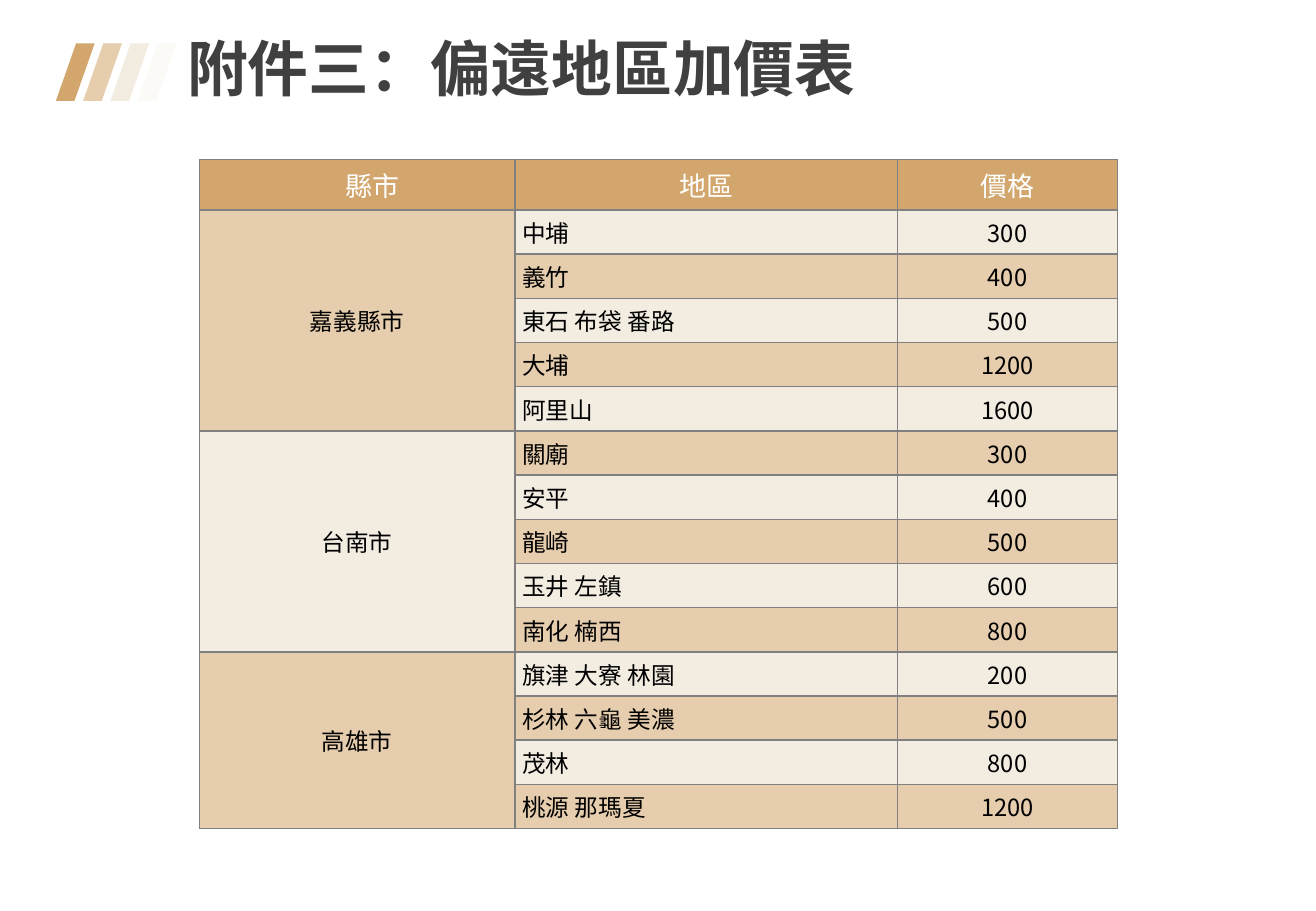
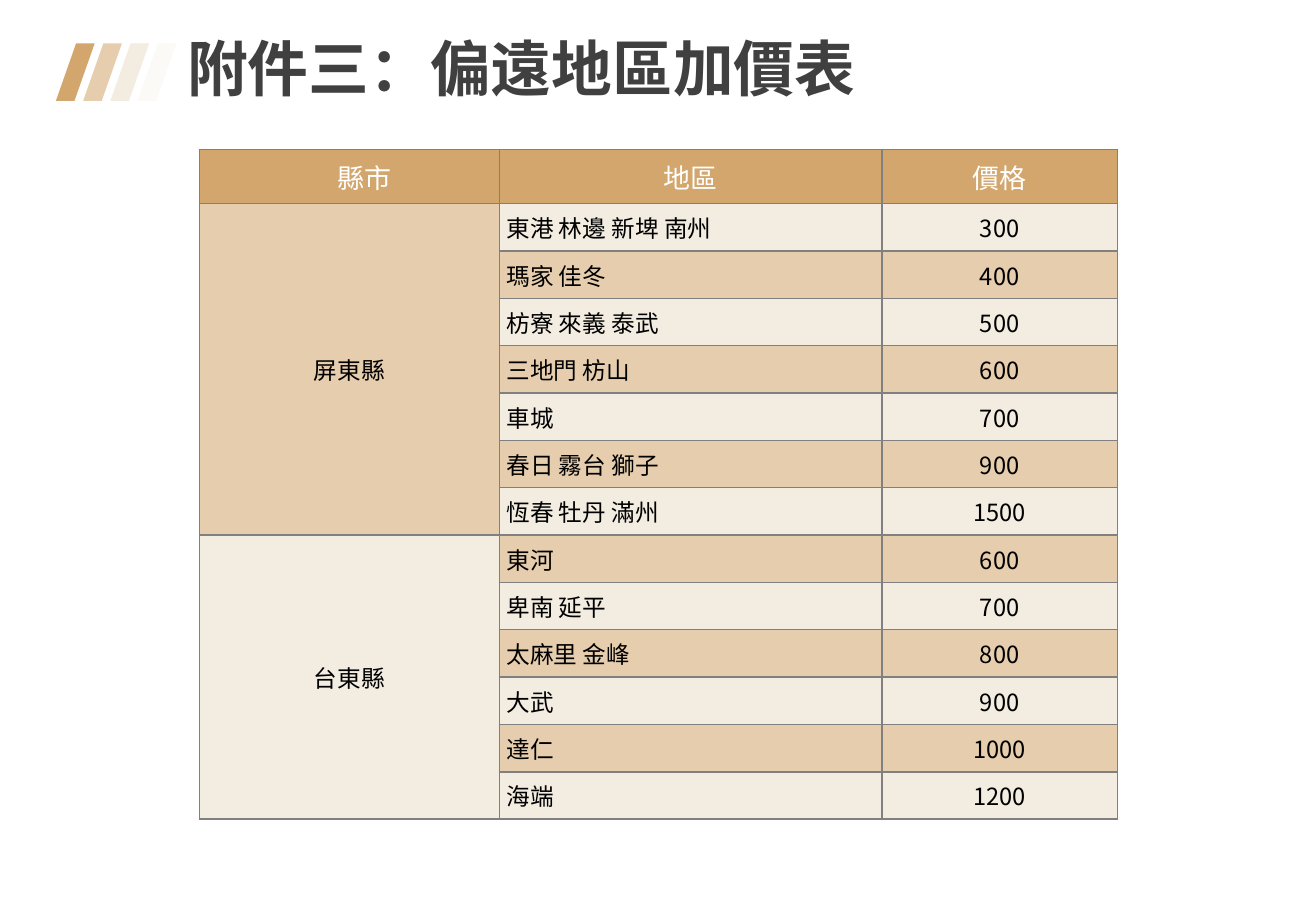
from lxml.etree import SubElement as Sub
from pptx import Presentation
from pptx.dml.color import RGBColor as Rgb
from pptx.enum.shapes import MSO_SHAPE as Kind
from pptx.enum.text import MSO_ANCHOR as Anchor, MSO_AUTO_SIZE as Fit, PP_ALIGN as Align
from pptx.oxml import parse_xml
from pptx.oxml.ns import nsdecls, qn
from pptx.util import Cm, Pt

HUES = {
    "gold": "D2A66C", "tan": "E6CDAD", "cream": "F2ECE1", "pale": "FBFAF6",
    "grid": "808080", "title": "404040", "black": "000000", "white": "FFFFFF",
}
SANS = "Noto Sans CJK SC"
TITLE = "附件三：偏遠地區加價表"
HEADS = ("縣市", "地區", "價格")
TALL = 14

SOUTH = {
    "嘉義縣市": [("中埔", 300), ("義竹", 400), ("東石 布袋 番路", 500),
             ("大埔", 1200), ("阿里山", 1600)],
    "台南市": [("關廟", 300), ("安平", 400), ("龍崎", 500),
            ("玉井 左鎮", 600), ("南化 楠西", 800)],
    "高雄市": [("旗津 大寮 林園", 200), ("杉林 六龜 美濃", 500),
            ("茂林", 800), ("桃源 那瑪夏", 1200)],
}
EAST = {
    "屏東縣": [("東港 林邊 新埤 南州", 300), ("瑪家 佳冬", 400),
            ("枋寮 來義 泰武", 500), ("三地門 枋山", 600), ("車城", 700),
            ("春日 霧台 獅子", 900), ("恆春 牡丹 滿州", 1500)],
    "台東縣": [("東河", 600), ("卑南 延平", 700), ("太麻里 金峰", 800),
            ("大武", 900), ("達仁", 1000), ("海端", 1200)],
}


def paint(fill, hue):
    """Fill with a named colour."""
    fill.solid()
    fill.fore_color.rgb = Rgb.from_string(HUES[hue])


def put(frame, text, size=14, hue="black", font=SANS, bold=False,
        align=Align.CENTER, space=1.0):
    """Write one formatted paragraph into a text frame."""
    para = frame.paragraphs[0]
    para.alignment, para.line_spacing = align, space
    run = para.add_run()
    run.text = text
    run.font.size, run.font.bold, run.font.name = Pt(size), bold, font
    run.font.color.rgb = Rgb.from_string(HUES[hue])
    Sub(run.font._element, qn("a:ea"), typeface=SANS)


def edge(cell):
    """Draw a thin line on all four sides of a cell."""
    props = cell._tc.get_or_add_tcPr()
    for i, side in enumerate("LRTB"):
        props.insert(i, parse_xml(
            f'<a:ln{side} {nsdecls("a")} w="12700"><a:solidFill>'
            f'<a:srgbClr val="{HUES["grid"]}"/></a:solidFill></a:ln{side}>'))


def style(cell, hue, pad=0.15):
    """Set the fill, margins and borders of a cell."""
    paint(cell.fill, hue)
    cell.vertical_anchor = Anchor.MIDDLE
    cell.margin_left = cell.margin_right = Cm(pad)
    cell.margin_top = cell.margin_bottom = 0
    edge(cell)


def setup(deck):
    """Place the title and the slanted bars on the shared layout."""
    page = deck.slide_layouts[5]
    head = page.placeholders[0]
    head.left, head.top, head.width, head.height = Cm(3.66), Cm(0.61), Cm(22.5), Cm(1.8)
    return page


def bars(slide, page):
    """Draw the slanted bars and move them to the layout."""
    for i, hue in enumerate(("gold", "tan", "cream", "pale")):
        bar = slide.shapes.add_shape(
            Kind.PARALLELOGRAM, Cm(1.17 + 0.57 * i), Cm(0.91), Cm(0.81), Cm(1.2))
        bar.adjustments[0] = 0.52
        bar.shadow.inherit = False
        paint(bar.fill, hue)
        bar.line.fill.background()
        bar.element.nvSpPr.cNvPr.set("id", str(20 + i))
        page.shapes.element.insert(2 + i, bar.element)


def grid(slide, data, top, wides, head):
    """Add a price table grouped by county."""
    count = sum(map(len, data.values()))
    table = slide.shapes.add_table(
        count + 1, 3, Cm(4.17), Cm(top), Cm(sum(wides)), Cm(TALL)).table
    for col, wide in zip(table.columns, wides):
        col.width = Cm(wide)
    for i, row in enumerate(table.rows):
        row.height = Cm((TALL - head) / count if i else head)
    for cell, text in zip(table.rows[0].cells, HEADS):
        style(cell, "gold", 0.18)
        put(cell.text_frame, text, size=16, hue="white")
    table.cell(0, 0).margin_left = Cm(0.82)
    row = 1
    for i, (county, areas) in enumerate(data.items()):
        first = table.cell(row, 0)
        put(first.text_frame, county)
        for area, price in areas:
            style(table.cell(row, 0), "cream" if i % 2 else "tan")
            for col, text, align in ((1, area, Align.LEFT), (2, str(price), Align.CENTER)):
                cell = table.cell(row, col)
                style(cell, "cream" if row % 2 else "tan")
                put(cell.text_frame, text, align=align)
            row += 1
        first.merge(table.cell(row - 1, 0))


def build(deck, page, *spec_args):
    """Add a slide with the title and a price table."""
    slide = deck.slides.add_slide(page)
    frame = slide.shapes.title.text_frame
    frame.auto_size, frame.vertical_anchor = Fit.NONE, Anchor.MIDDLE
    put(frame, TITLE, size=36, hue="title", font="Roboto", bold=True,
        align=Align.LEFT, space=0.9)
    grid(slide, *spec_args)
    return slide


def main():
    """Build and save the deck."""
    deck = Presentation()
    deck.slide_width, deck.slide_height = Cm(27.52), Cm(19.05)
    page = setup(deck)
    slide = build(deck, page, SOUTH, 3.33, (6.6, 8, 4.6), 1.06)
    bars(slide, page)
    build(deck, page, EAST, 3.13, (6.27, 8, 4.93), 1.13)
    deck.save("out.pptx")


if __name__ == "__main__":
    main()
